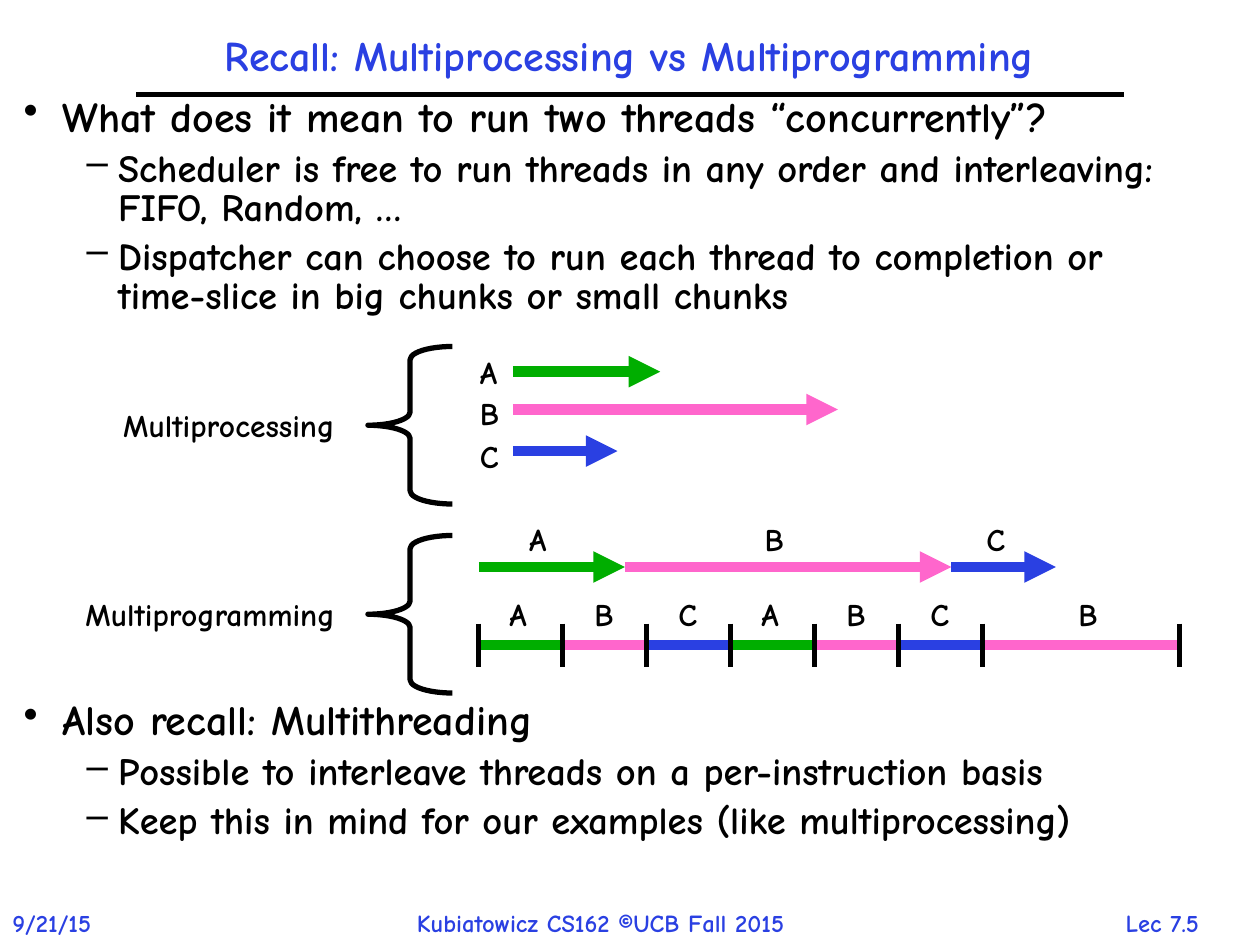
from dataclasses import dataclass

from lxml import etree
from pptx import Presentation
from pptx.dml.color import RGBColor
from pptx.enum.shapes import MSO_CONNECTOR, MSO_SHAPE
from pptx.enum.text import MSO_ANCHOR, MSO_AUTO_SIZE, PP_ALIGN
from pptx.oxml.ns import qn
from pptx.util import Inches, Pt

STRAIGHT = MSO_CONNECTOR.STRAIGHT
LEFT_BRACE = MSO_SHAPE.LEFT_BRACE
LEFT, CENTER = PP_ALIGN.LEFT, PP_ALIGN.CENTER
MIDDLE = MSO_ANCHOR.MIDDLE
GROW, FIXED = MSO_AUTO_SIZE.SHAPE_TO_FIT_TEXT, MSO_AUTO_SIZE.NONE

FONT = "Comic Neue"
COLORS = {"ink": "000000", "blue": "2A40E2", "green": "00AE00", "pink": "FF66CC"}
THREAD_COLORS = {"A": "green", "B": "pink", "C": "blue"}


@dataclass
class Level:
    bullet: str
    size: int
    margin: float
    hanging: float


@dataclass
class ThreadRun:
    """A stretch of one thread's work; label_x is the middle of its letter."""
    thread: str
    start: float
    end: float
    y: float
    label_x: float
    label_top: float


LEVELS = [Level("•", 24, 0.31, 0.31), Level("–", 22, 0.75, 0.25)]

CONCURRENCY = [
    (0, "What does it mean to run two threads “concurrently”?"),
    (1, "Scheduler is free to run threads in any order and interleaving: FIFO, Random, …"),
    (1, "Dispatcher can choose to run each thread to completion or "
        "time-slice in big chunks or small chunks"),
]
MULTITHREADING = [
    (0, "Also recall: Multithreading"),
    (1, "Possible to interleave threads on a per-instruction basis"),
    (1, "Keep this in mind for our examples (like multiprocessing)"),
]

PARALLEL_RUNS = [
    ThreadRun("A", 4.07, 5.24, 2.95, 3.9, 2.75),
    ThreadRun("B", 4.07, 6.65, 3.25, 3.89, 3.08),
    ThreadRun("C", 4.07, 4.9, 3.58, 3.89, 3.42),
]
SEQUENTIAL_RUNS = [
    ThreadRun("A", 3.8, 4.96, 4.5, 4.29, 4.08),
    ThreadRun("B", 4.96, 7.55, 4.5, 6.15, 4.08),
    ThreadRun("C", 7.55, 8.38, 4.5, 7.91, 4.08),
]
TIMELINE_START, TIMELINE_END, TIMELINE_Y = 3.8, 9.36, 5.12
SLICE = 2 / 3
SLICED_THREADS = "ABCABC"
TICK_TOP, TICK_BOTTOM = 4.95, 5.29


def rgb(color: str) -> RGBColor:
    return RGBColor.from_string(COLORS[color])


def style_font(font, size: float, color: str) -> None:
    font.name = FONT
    font.size = Pt(size)
    font.bold = True
    font.color.rgb = rgb(color)


def add_label(slide, text: str, left: float, top: float, width: float, height: float = 0.4,
              size: int = 18, color: str = "ink", align=LEFT):
    box = slide.shapes.add_textbox(Inches(left), Inches(top), Inches(width), Inches(height))
    frame = box.text_frame
    frame.word_wrap = False
    frame.auto_size = GROW
    paragraph = frame.paragraphs[0]
    paragraph.text = text
    paragraph.alignment = align
    style_font(paragraph.font, size, color)
    return box


def add_title(slide, text: str) -> None:
    box = add_label(slide, text, 1.08, 0.17, 7.83, 0.58, 24, "blue", CENTER)
    frame = box.text_frame
    frame.auto_size = FIXED
    frame.word_wrap = True
    frame.vertical_anchor = MIDDLE
    frame.paragraphs[0].line_spacing = 0.9


def add_bullets(slide, items: list[tuple[int, str]], top: float, height: float) -> None:
    box = slide.shapes.add_textbox(Inches(0.09), Inches(top), Inches(9.53), Inches(height))
    frame = box.text_frame
    frame.word_wrap = True
    for index, (depth, text) in enumerate(items):
        level = LEVELS[depth]
        paragraph = frame.add_paragraph() if index else frame.paragraphs[0]
        paragraph.text = text
        paragraph.level = depth
        paragraph.line_spacing = 0.85
        paragraph.space_before = Pt(level.size / 4)
        style_font(paragraph.font, level.size, "ink")
        properties = paragraph._p.get_or_add_pPr()
        properties.set("marL", str(Inches(level.margin)))
        properties.set("indent", str(-Inches(level.hanging)))
        bullet = etree.Element(qn("a:buChar"), char=level.bullet)
        properties.find(qn("a:defRPr")).addprevious(bullet)


def add_line(slide, x1: float, y1: float, x2: float, y2: float,
             color: str = "ink", width: float = 3, arrow: bool = False) -> None:
    line = slide.shapes.add_connector(STRAIGHT, Inches(x1), Inches(y1), Inches(x2), Inches(y2))
    line.line.color.rgb = rgb(color)
    line.line.width = Pt(width)
    if arrow:
        etree.SubElement(line.line._get_or_add_ln(), qn("a:tailEnd"), type="triangle")
    etree.SubElement(line._element.spPr, qn("a:effectLst"))


def add_run(slide, run: ThreadRun, arrow: bool) -> None:
    add_line(slide, run.start, run.y, run.end, run.y, THREAD_COLORS[run.thread], 6, arrow)
    width = 0.38 if run.thread == "A" else 0.36
    add_label(slide, run.thread, run.label_x - width / 2, run.label_top, width)


def add_timeline(slide) -> None:
    """Equal slices take turns, then B alone runs to the end."""
    starts = [TIMELINE_START + i * SLICE for i in range(len(SLICED_THREADS) + 1)]
    runs = [ThreadRun(thread, start, start + SLICE, TIMELINE_Y, start + SLICE / 2, 4.67)
            for thread, start in zip(SLICED_THREADS, starts)]
    runs.append(ThreadRun("B", starts[-1], TIMELINE_END, TIMELINE_Y, 8.64, 4.67))
    for run in runs:
        add_run(slide, run, arrow=False)
    for x in [*starts, TIMELINE_END]:
        add_line(slide, x, TICK_TOP, x, TICK_BOTTOM)


def add_brace(slide, top: float) -> None:
    brace = slide.shapes.add_shape(LEFT_BRACE, Inches(2.92), Inches(top),
                                   Inches(0.67), Inches(1.25))
    brace.adjustments[0] = 0.156
    brace.adjustments[1] = 0.5
    brace.shadow.inherit = False
    brace.fill.background()
    brace.line.color.rgb = rgb("ink")
    brace.line.width = Pt(3)


def main() -> None:
    prs = Presentation()
    prs.slide_width, prs.slide_height = Inches(10), Inches(7.5)
    slide = prs.slides.add_slide(prs.slide_layouts[6])

    add_label(slide, "Lec 7.5", 8.62, 7.16, 1.21, 0.33, 14, "blue", CENTER)
    add_label(slide, "9/21/15", 0, 7.16, 1, 0.34, 14, "blue")
    add_label(slide, "Kubiatowicz CS162 ©UCB Fall 2015", 3.21, 7.16, 3.61, 0.34, 14, "blue")
    add_line(slide, 1.08, 0.75, 8.92, 0.75)
    add_title(slide, "Recall: Multiprocessing vs Multiprogramming")
    add_bullets(slide, CONCURRENCY, 0.73, 1.9)
    add_bullets(slide, MULTITHREADING, 5.52, 1.4)

    add_label(slide, "Multiprocessing", 0.88, 3.17, 2.04)
    add_brace(slide, 2.75)
    for run in PARALLEL_RUNS:
        add_run(slide, run, arrow=True)

    add_label(slide, "Multiprogramming", 0.58, 4.67, 2.3)
    add_brace(slide, 4.25)
    for run in SEQUENTIAL_RUNS:
        add_run(slide, run, arrow=True)
    add_timeline(slide)

    prs.save("out.pptx")


if __name__ == "__main__":
    main()
